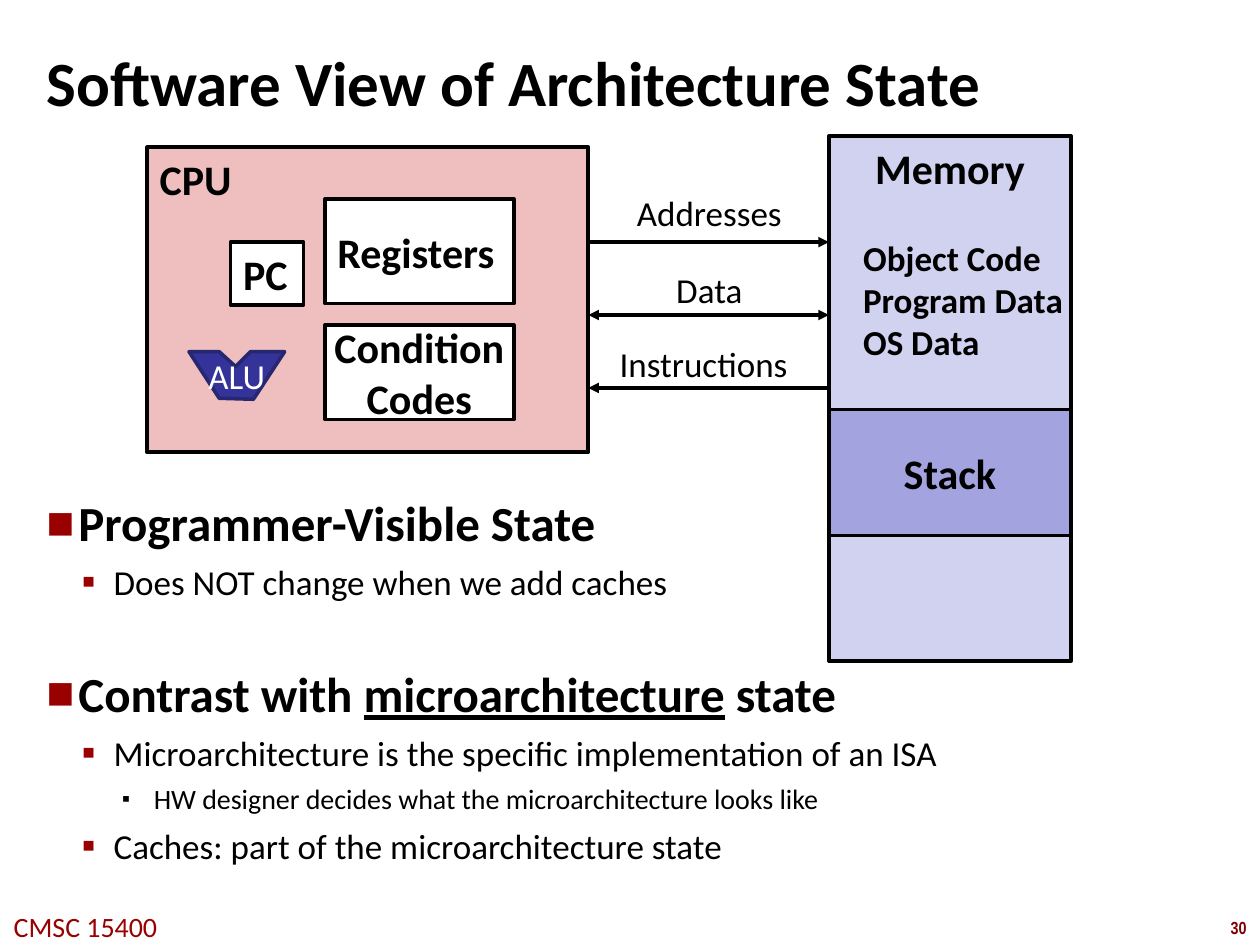
from lxml.etree import SubElement
from pptx import Presentation
from pptx.dml.color import RGBColor
from pptx.enum.shapes import MSO_CONNECTOR as Connector, MSO_SHAPE as Shape
from pptx.enum.text import MSO_ANCHOR as Anchor, MSO_AUTO_SIZE as AutoSize, PP_ALIGN as Align
from pptx.oxml.ns import qn
from pptx.util import Cm, Pt

BLACK, WHITE, RED = "000000", "FFFFFF", "990000"
BULLETS = [
    ("■", RED, 60, 0.64, 28, True),
    ("▪", RED, 110, 1.35, 20, False),
    ("▪", BLACK, 80, 2.16, 16, False),
]
OUTLINE = [
    (0, 0, ["Programmer-Visible State"]),
    (1, 5, ["Does NOT change when we add caches"]),
    (0, 35, ["Contrast with ", "microarchitecture", " state"]),
    (1, 5, ["Microarchitecture is the specific implementation of an ISA"]),
    (2, 5, ["HW designer decides what the microarchitecture looks like"]),
    (1, 5, ["Caches: part of the microarchitecture state"]),
]


def color(value):
    """Turn a hex string into a colour."""
    return RGBColor.from_string(value)


def style_font(para, size, hue=BLACK, bold=False, name="Calibri"):
    """Set the font of a whole paragraph."""
    font = para.font
    font.name, font.size, font.bold = name, Pt(size), bold
    font.color.rgb = color(hue)


def write(shape, text, size, hue=BLACK, bold=False, align=Align.LEFT,
          anchor=Anchor.MIDDLE, wrap=True, name="Calibri"):
    """Fill a shape with evenly formatted text."""
    frame = shape.text_frame
    frame.text = text
    frame.word_wrap, frame.vertical_anchor = wrap, anchor
    for para in frame.paragraphs:
        para.alignment = align
        style_font(para, size, hue, bold, name)


def place(shape, left, top, width, height):
    """Move and size a placeholder, and give it narrow margins."""
    shape.left, shape.top = Cm(left), Cm(top)
    shape.width, shape.height = Cm(width), Cm(height)
    frame = shape.text_frame
    frame.auto_size = AutoSize.NONE
    frame.margin_left = frame.margin_right = Cm(0.1)
    frame.margin_top = frame.margin_bottom = Cm(0.1)


def paint(shape, fill, line, weight):
    """Give a shape a flat fill and outline."""
    shape.shadow.inherit = False
    shape.fill.solid()
    shape.fill.fore_color.rgb = color(fill)
    shape.line.color.rgb = color(line)
    shape.line.width = Pt(weight)


def add_block(page, area, text, fill, weight=2, **style):
    """Add an outlined rectangle with a bold caption."""
    block = page.shapes.add_shape(Shape.RECTANGLE, *map(Cm, area))
    paint(block, fill, BLACK, weight)
    write(block, text, 24, bold=True, **style)


def add_label(page, area, text, size, **style):
    """Add a text box."""
    box = page.shapes.add_textbox(*map(Cm, area))
    write(box, text, size, anchor=Anchor.TOP, **style)


def add_bus(page, height, ends):
    """Add a line from the CPU to the memory with arrowheads at the given ends."""
    bus = page.shapes.add_connector(
        Connector.STRAIGHT, Cm(11.86), Cm(height), Cm(16.71), Cm(height))
    bus.line.color.rgb = color(BLACK)
    bus.line.width = Pt(2)
    line = bus.line._get_or_add_ln()
    for end in ends:
        SubElement(line, qn(f"a:{end}End"), type="triangle")
    SubElement(bus._element.spPr, qn("a:effectLst"))


def add_alu(page):
    """Add the notched ALU outline."""
    points = [(4.42, 8.03), (5.11, 8.05), (5.74, 7.09), (5.05, 7.09),
              (4.75, 7.39), (4.42, 7.09)]
    builder = page.shapes.build_freeform(Cm(3.81), Cm(7.09))
    builder.add_line_segments([(Cm(x), Cm(y)) for x, y in points])
    alu = builder.convert_to_shape()
    paint(alu, "333399", "262671", 2)
    write(alu, "ALU", 20, WHITE, align=Align.CENTER)


def add_bullet(para, char, hue, percent, indent):
    """Give a paragraph a hanging bullet."""
    props = para._p.get_or_add_pPr()
    props.set("marL", str(Cm(indent)))
    props.set("indent", str(-Cm(0.64)))
    SubElement(SubElement(props, qn("a:buClr")), qn("a:srgbClr"), val=hue)
    SubElement(props, qn("a:buSzPct"), val=str(percent * 1000))
    SubElement(props, qn("a:buFont"), typeface="Calibri")
    SubElement(props, qn("a:buChar"), char=char)


def fill_outline(body):
    """Write the bulleted list, underlining the middle span of a split line."""
    frame = body.text_frame
    for index, (level, gap, texts) in enumerate(OUTLINE):
        para = frame.add_paragraph() if index else frame.paragraphs[0]
        char, hue, percent, indent, size, bold = BULLETS[level]
        para.level = level
        para.space_before = Pt(gap)
        add_bullet(para, char, hue, percent, indent)
        style_font(para, size, bold=bold)
        for position, text in enumerate(texts):
            span = para.add_run()
            span.text = text
            if position == 1:
                span.font.underline = True


def add_cpu(page):
    """Draw the CPU and its parts."""
    add_block(page, (2.97, 2.97, 8.89, 6.15), "CPU", "EFBFBF", 2.25, anchor=Anchor.TOP)
    add_block(page, (4.65, 4.88, 1.47, 1.27), "PC", WHITE, wrap=False)
    add_block(page, (6.55, 4.01, 3.81, 2.11), "Registers", WHITE, wrap=False)
    add_block(page, (6.55, 6.55, 3.81, 1.91), "Condition\nCodes", WHITE,
              align=Align.CENTER, wrap=False)
    add_alu(page)


def add_memory(page):
    """Draw the memory, its contents and the stack."""
    add_block(page, (16.71, 2.74, 4.88, 10.59), "Memory", "D1D1F0",
              align=Align.CENTER, anchor=Anchor.TOP, wrap=False)
    add_label(page, (17.15, 4.65, 4.88, 2.82),
              "Object Code\nProgram Data\nOS Data", 20, bold=True)
    add_block(page, (16.71, 8.26, 4.88, 2.54), "Stack", "A3A3E0",
              align=Align.CENTER, wrap=False)


def main():
    """Build the slide."""
    deck = Presentation()
    deck.slide_width, deck.slide_height = Cm(25.4), Cm(19.05)
    page = deck.slides.add_slide(deck.slide_layouts[1])

    title, body = page.placeholders
    place(title, 0.84, 0.84, 20.07, 1.6)
    write(title, "Software View of Architecture State", 36, bold=True)
    place(body, 0.84, 9.83, 18.42, 8.59)
    fill_outline(body)

    add_cpu(page)
    add_memory(page)
    buses = [
        ("Addresses", 3.73, 4.88, 4.88, ["tail"]),
        ("Data", 5.28, 4.88, 6.35, ["head", "tail"]),
        ("Instructions", 6.78, 4.65, 7.82, ["head"]),
    ]
    for text, top, width, height, ends in buses:
        add_label(page, (11.86, top, width, 1.09), text, 20, align=Align.CENTER)
        add_bus(page, height, ends)

    add_label(page, (-0.08, 18.21, 3.61, 0.94), "CMSC 15400", 16, hue=RED,
              align=Align.CENTER, wrap=False)
    add_label(page, (24.54, 18.36, 0.86, 0.69), "30", 10, hue="800000", bold=True,
              align=Align.CENTER, wrap=False, name="Arial Narrow")
    deck.save("out.pptx")


if __name__ == "__main__":
    main()
